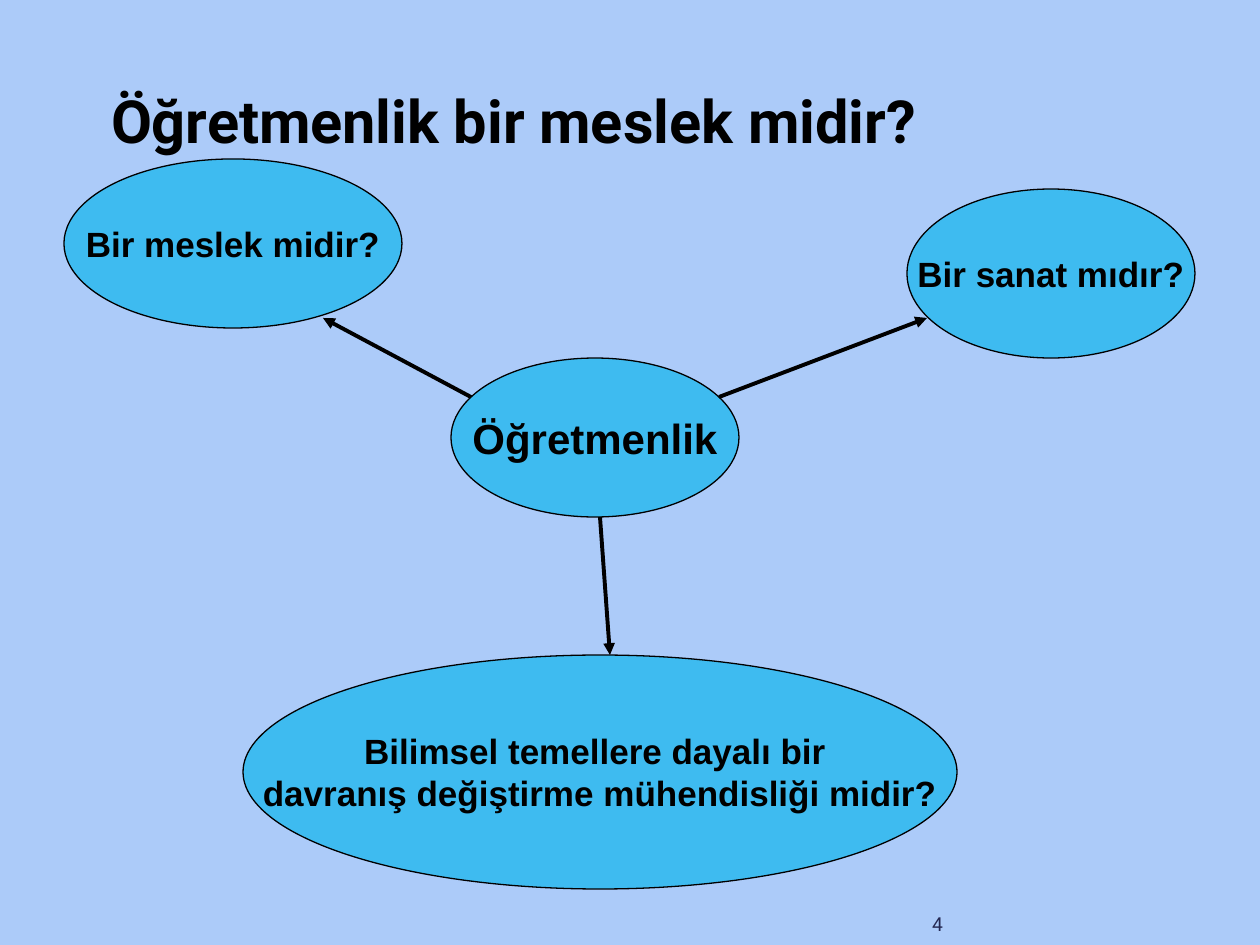
from lxml import etree
from pptx import Presentation
from pptx import util as u
from pptx.dml.color import RGBColor
from pptx.enum import shapes, text
from pptx.oxml.ns import qn

SCALE = 914400 / 126
COLOURS = {"back": "ACCBF9", "bubble": "3EBBF0", "ink": "000000", "number": "242852"}

BUBBLES = [
    (64, 159, 338, 169, 20, ["Bir meslek midir?"]),
    (451, 358, 288, 159, 24, ["Öğretmenlik"]),
    (907, 189, 288, 169, 20, ["Bir sanat mıdır?"]),
    (243, 655, 714, 234, 20,
     ["Bilimsel temellere dayalı bir ", "davranış değiştirme mühendisliği midir?"]),
]
ARROWS = [(719, 397, 927, 318), (471, 397, 323, 318), (600, 517, 610, 655)]


def px(*lengths):
    """Turn pixel lengths into EMU."""
    return [u.Emu(round(length * SCALE)) for length in lengths]


def colour(name):
    """Look up a named colour."""
    return RGBColor.from_string(COLOURS[name])


def write(frame, lines, size, font, ink, align, bold=False):
    """Write formatted paragraphs into a text frame."""
    frame.text = "\n".join(lines)
    for para in frame.paragraphs:
        para.alignment = align
        para.font.size = u.Pt(size)
        para.font.name = font
        para.font.bold = bold
        para.font.color.rgb = colour(ink)


def set_frame(frame, side, anchor):
    """Set side margins and bottom anchoring of a wrapped frame."""
    frame.word_wrap = True
    frame.auto_size = text.MSO_AUTO_SIZE.NONE
    frame.margin_left = frame.margin_right = px(side)[0]
    frame.margin_top = frame.margin_bottom = 0
    frame.vertical_anchor = anchor


def add_title(page, words):
    """Place and format the title placeholder."""
    title = page.shapes.title
    title.left, title.top, title.width, title.height = px(105, 26, 1022, 129)
    set_frame(title.text_frame, 6, text.MSO_ANCHOR.BOTTOM)
    write(title.text_frame, [words], 34, "Roboto", "ink", text.PP_ALIGN.LEFT, True)


def add_page_number(page, number):
    """Add the page number at the foot."""
    box = page.shapes.add_textbox(*px(862, 903, 81, 32))
    set_frame(box.text_frame, 0, text.MSO_ANCHOR.BOTTOM)
    write(box.text_frame, [number], 11, "Roboto", "number", text.PP_ALIGN.RIGHT)


def add_bubble(group, left, top, width, height, size, lines):
    """Add an ellipse with centred bold text."""
    bubble = group.shapes.add_shape(
        shapes.MSO_SHAPE.OVAL, *px(left, top, width, height))
    bubble.shadow.inherit = False
    bubble.fill.solid()
    bubble.fill.fore_color.rgb = colour("bubble")
    bubble.line.color.rgb = colour("ink")
    bubble.line.width = u.Pt(0.75)
    frame = bubble.text_frame
    frame.word_wrap = False
    frame.vertical_anchor = text.MSO_ANCHOR.MIDDLE
    write(frame, lines, size, "Arial", "ink", text.PP_ALIGN.CENTER, True)


def add_arrow(group, *ends):
    """Add a straight line with a triangle at its end."""
    arrow = group.shapes.add_connector(shapes.MSO_CONNECTOR.STRAIGHT, *px(*ends))
    arrow.line.color.rgb = colour("ink")
    arrow.line.width = u.Pt(2.25)
    etree.SubElement(arrow.line._get_or_add_ln(), qn("a:tailEnd"), type="triangle")
    etree.SubElement(arrow._element.spPr, qn("a:effectLst"))


def main():
    """Build and save the slide."""
    deck = Presentation()
    deck.slide_width, deck.slide_height = px(1260, 945)
    page = deck.slides.add_slide(deck.slide_layouts[5])
    page.background.fill.solid()
    page.background.fill.fore_color.rgb = colour("back")
    add_page_number(page, "4")
    add_title(page, "Öğretmenlik bir meslek midir?")
    group = page.shapes.add_group_shape()
    for bubble in BUBBLES:
        add_bubble(group, *bubble)
    for arrow in ARROWS:
        add_arrow(group, *arrow)
    deck.save("out.pptx")


if __name__ == "__main__":
    main()
